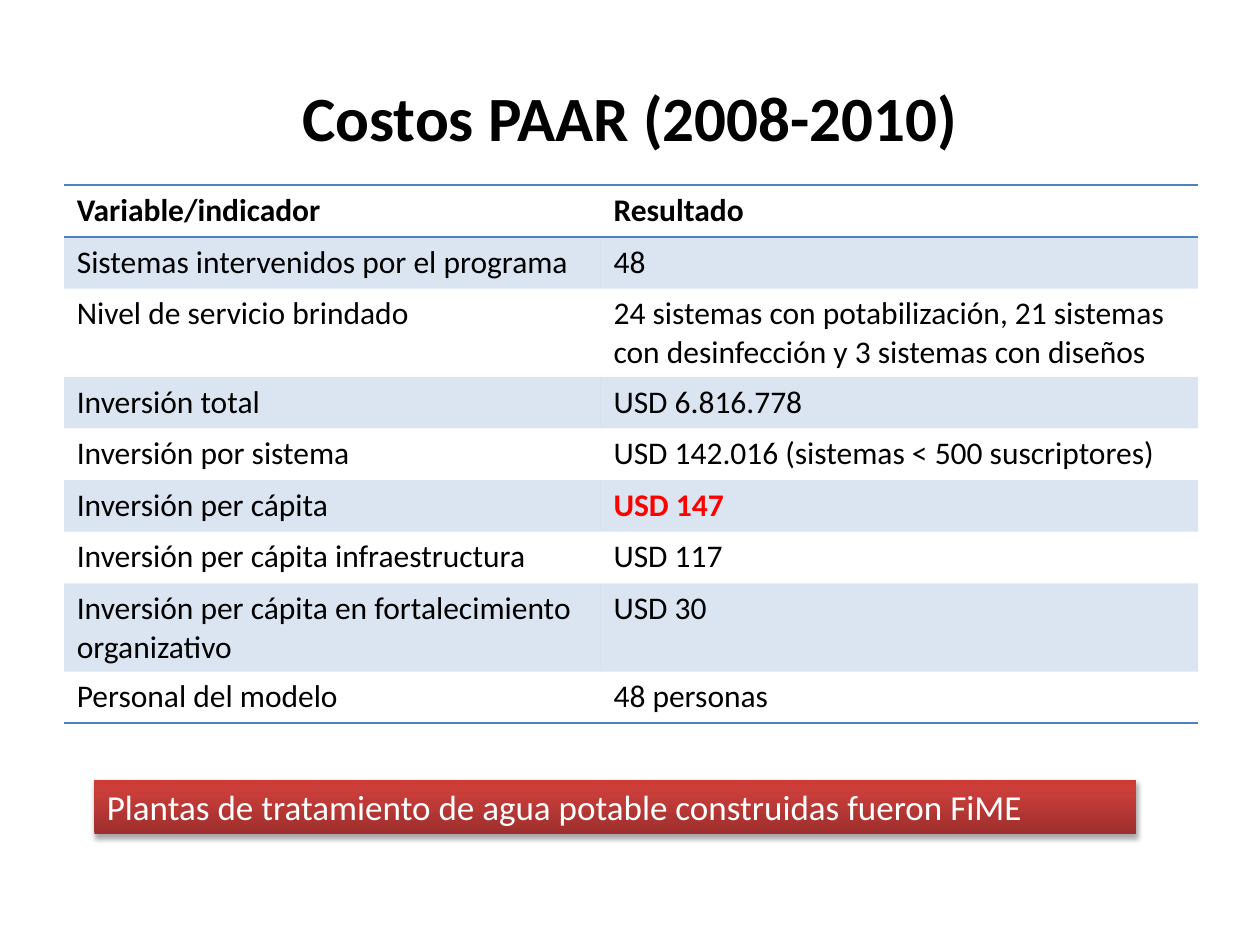
from typing import NamedTuple

from lxml.etree import SubElement
from pptx import Presentation
from pptx.dml.color import RGBColor
from pptx.enum.shapes import MSO_SHAPE
from pptx.enum.text import MSO_ANCHOR, PP_ALIGN
from pptx.oxml.ns import qn
from pptx.util import Inches, Pt

BLACK = RGBColor(0x00, 0x00, 0x00)
WHITE = RGBColor(0xFF, 0xFF, 0xFF)
RED = RGBColor(0xFF, 0x00, 0x00)
BLUE = RGBColor(0x4F, 0x81, 0xBD)
BANNER_STOPS = (
    (0, RGBColor(0x9C, 0x2F, 0x2D)),
    (80, RGBColor(0xCB, 0x3E, 0x3A)),
    (100, RGBColor(0xCE, 0x3B, 0x37)),
)
FONT = "Calibri"
PLAIN_TABLE = "{2D5ABB26-0587-4C30-8999-92F81FD0307C}"
SLIDE_W, SLIDE_H = Inches(10), Inches(7.5)
ROW_HEIGHT = Inches(0.41)
COLUMN_SHARES = (0.426, 0.474)


class Area(NamedTuple):
    left: float
    top: float
    width: float
    height: float

    def lengths(self) -> tuple[int, ...]:
        sides = (SLIDE_W, SLIDE_H, SLIDE_W, SLIDE_H)
        return tuple(int(share * side) for share, side in zip(self, sides))


class Indicator(NamedTuple):
    label: str
    result: str
    color: RGBColor = BLACK
    bold: bool = False


TITLE_AREA = Area(0.05, 0.04, 0.9, 1 / 6)
TABLE_AREA = Area(0.051, 0.196, 0.9, 0.492)
BANNER_AREA = Area(0.075, 0.825, 0.827, 0.058)

INDICATORS = (
    Indicator("Variable/indicador", "Resultado", bold=True),
    Indicator("Sistemas intervenidos por el programa", "48"),
    Indicator(
        "Nivel de servicio brindado",
        "24 sistemas con potabilización, 21 sistemas con desinfección y 3 sistemas con diseños",
    ),
    Indicator("Inversión total", "USD 6.816.778"),
    Indicator("Inversión por sistema", "USD 142.016 (sistemas < 500 suscriptores)"),
    Indicator("Inversión per cápita", "USD 147", RED, True),
    Indicator("Inversión per cápita infraestructura", "USD 117"),
    Indicator("Inversión per cápita en fortalecimiento organizativo", "USD 30"),
    Indicator("Personal del modelo", "48 personas"),
)


def write(frame, text: str, size: int, color: RGBColor, bold: bool = False, align=PP_ALIGN.LEFT) -> None:
    frame.text = text
    frame.word_wrap = True
    paragraph = frame.paragraphs[0]
    paragraph.alignment = align
    font = paragraph.runs[0].font
    font.name, font.size, font.bold = FONT, Pt(size), bold
    font.color.rgb = color


def add_color(parent, color: RGBColor, alpha: int = 100) -> None:
    node = SubElement(parent, qn("a:srgbClr"), val=str(color))
    if alpha < 100:
        SubElement(node, qn("a:alpha"), val=str(alpha * 1000))


def add_rule(cell, side: str) -> None:
    rule = SubElement(cell._tc.get_or_add_tcPr(), qn(f"a:ln{side}"), w=str(Pt(1)))
    add_color(SubElement(rule, qn("a:solidFill")), BLUE)


def style_cell(cell, row: int) -> None:
    if row == 0:
        add_rule(cell, "T")
    if row in (0, len(INDICATORS) - 1):
        add_rule(cell, "B")
    if row % 2:
        band = SubElement(cell._tc.get_or_add_tcPr(), qn("a:solidFill"))
        add_color(band, BLUE, 20)
    else:
        cell.fill.background()


def add_title(slide) -> None:
    frame = slide.shapes.add_textbox(*TITLE_AREA.lengths()).text_frame
    write(frame, "Costos PAAR (2008-2010)", 36, BLACK, True, PP_ALIGN.CENTER)
    frame.vertical_anchor = MSO_ANCHOR.MIDDLE


def add_indicators(slide) -> None:
    graphic = slide.shapes.add_table(len(INDICATORS), len(COLUMN_SHARES), *TABLE_AREA.lengths())
    table = graphic.table
    table.horz_banding = False
    table._tbl.tblPr.find(qn("a:tableStyleId")).text = PLAIN_TABLE
    for column, share in zip(table.columns, COLUMN_SHARES):
        column.width = int(SLIDE_W * share)
    for row, indicator in enumerate(INDICATORS):
        table.rows[row].height = ROW_HEIGHT
        label, result = table.cell(row, 0), table.cell(row, 1)
        write(label.text_frame, indicator.label, 18, BLACK, row == 0)
        write(result.text_frame, indicator.result, 18, indicator.color, indicator.bold)
        for cell in (label, result):
            style_cell(cell, row)


def add_banner(slide) -> None:
    banner = slide.shapes.add_shape(MSO_SHAPE.RECTANGLE, *BANNER_AREA.lengths())
    banner.line.fill.background()
    banner.fill.gradient()
    banner.fill.gradient_angle = 90
    properties = banner._element.spPr
    stops = properties.find(f"{qn('a:gradFill')}/{qn('a:gsLst')}")
    stops.clear()
    for position, color in BANNER_STOPS:
        add_color(SubElement(stops, qn("a:gs"), pos=str(position * 1000)), color)
    banner.shadow.inherit = False
    shadow = SubElement(
        properties.find(qn("a:effectLst")), qn("a:outerShdw"),
        blurRad=str(Pt(3.1)), dist=str(Pt(1.8)), dir="5400000", rotWithShape="0",
    )
    add_color(shadow, BLACK, 35)
    write(banner.text_frame, "Plantas de tratamiento de agua potable construidas fueron FiME", 20, WHITE)
    banner.text_frame.vertical_anchor = MSO_ANCHOR.TOP


def main() -> None:
    deck = Presentation()
    deck.slide_width, deck.slide_height = SLIDE_W, SLIDE_H
    slide = deck.slides.add_slide(deck.slide_layouts[6])
    add_title(slide)
    add_indicators(slide)
    add_banner(slide)
    deck.save("out.pptx")


if __name__ == "__main__":
    main()
